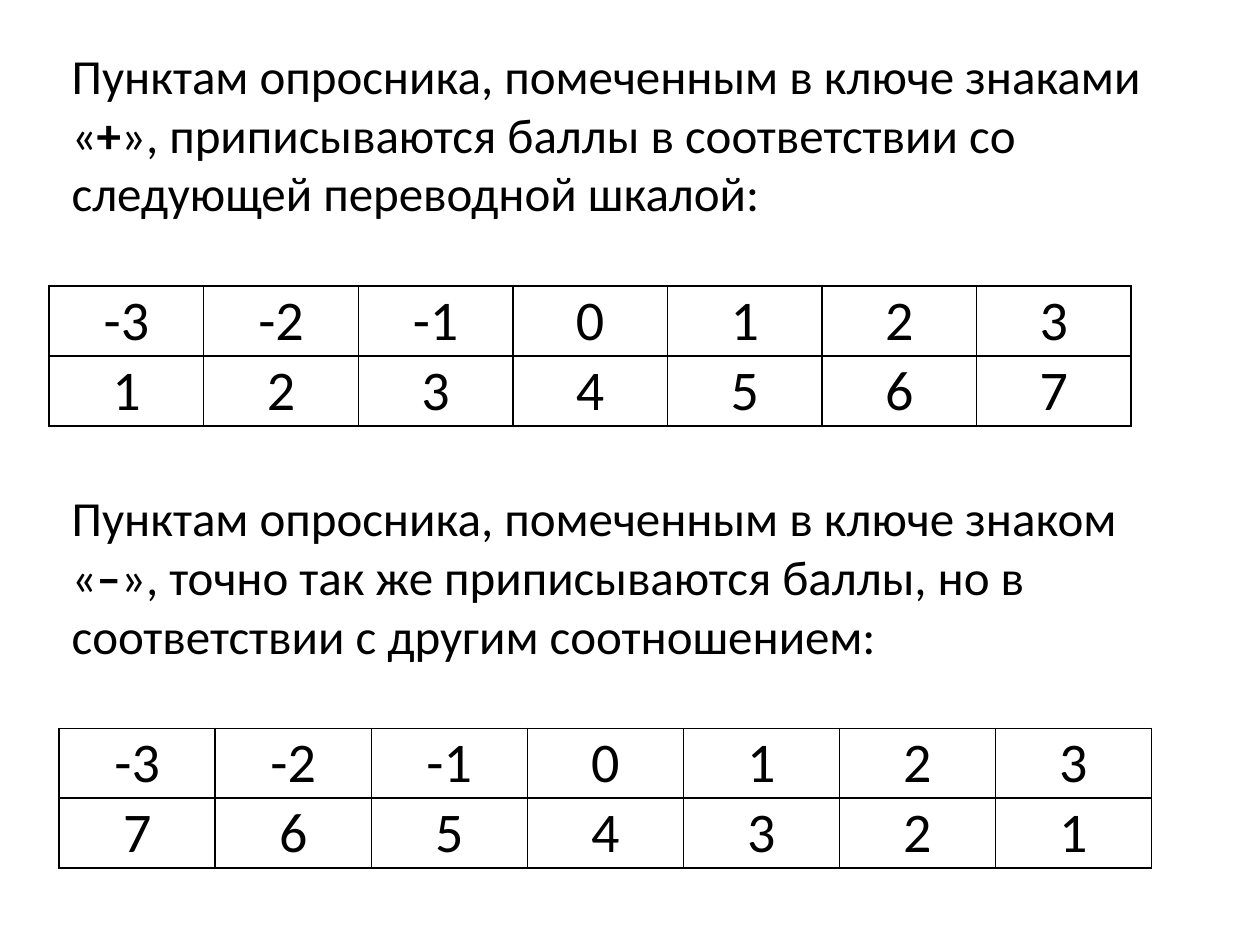
from dataclasses import dataclass

from lxml import etree
from pptx import Presentation
from pptx import util as u
from pptx.dml.color import RGBColor
from pptx.enum import text as t
from pptx.oxml import ns

INK = "000000"
FACE = "Calibri"
MARKS = range(-3, 4)


@dataclass
class Rule:
    lead: str
    sign: str
    rest: str
    gap: float  # points above the paragraph


@dataclass
class Scale:
    left: float
    top: float
    width: float
    scores: range


RULES = [
    Rule("Пунктам опросника, помеченным в ключе знаками «", "+",
         "», приписываются баллы в соответствии со следующей переводной шкалой:", 0),
    Rule("Пунктам опросника, помеченным в ключе знаком «", "–",
         "», точно так же приписываются баллы, но в соответствии с другим соотношением:", 152),
]
SCALES = [
    Scale(0.39, 2.27, 8.59, range(1, 8)),
    Scale(0.47, 5.78, 8.67, range(7, 0, -1)),
]


def paint(color, code: str) -> None:
    color.rgb = RGBColor.from_string(code)


def write(para, words: str, size: float, bold: bool = False) -> None:
    run = para.add_run()
    run.text = words
    for key, value in {"name": FACE, "size": u.Pt(size), "bold": bold}.items():
        setattr(run.font, key, value)
    paint(run.font.color, INK)


def frame(cell) -> None:
    """Draw a thin line on each side of the cell."""
    props = cell._tc.get_or_add_tcPr()
    for side in ("lnL", "lnR", "lnT", "lnB"):
        line = etree.SubElement(props, ns.qn(f"a:{side}"), w=str(u.Pt(1)))
        fill = etree.SubElement(line, ns.qn("a:solidFill"))
        etree.SubElement(fill, ns.qn("a:srgbClr"), val=INK)


def add_rules(slide, rules: list[Rule]) -> None:
    box = slide.shapes.add_textbox(
        u.Inches(0.47), u.Inches(0.31), u.Inches(8.83), u.Inches(5.69))
    body = box.text_frame
    body.word_wrap = True
    for i, rule in enumerate(rules):
        para = body.add_paragraph() if i else body.paragraphs[0]
        para.space_before = u.Pt(rule.gap)
        write(para, rule.lead, 28)
        write(para, rule.sign, 28, bold=True)
        write(para, rule.rest, 28)


def add_scale(slide, scale: Scale) -> None:
    rows = (MARKS, scale.scores)
    table = slide.shapes.add_table(
        len(rows), len(MARKS), u.Inches(scale.left), u.Inches(scale.top),
        u.Inches(scale.width), u.Inches(1.11)).table
    for key in ("first_row", "horz_banding"):
        setattr(table, key, False)
    pad = u.Inches(0.01)
    look = {"vertical_anchor": t.MSO_ANCHOR.MIDDLE, "margin_left": pad,
            "margin_right": pad, "margin_top": pad, "margin_bottom": pad}
    for r, row in enumerate(rows):
        for c, value in enumerate(row):
            cell = table.cell(r, c)
            for key, item in look.items():
                setattr(cell, key, item)
            frame(cell)
            cell.fill.background()
            para = cell.text_frame.paragraphs[0]
            para.alignment = t.PP_ALIGN.CENTER
            write(para, str(value), 32)


def main() -> None:
    deck = Presentation()
    deck.slide_width, deck.slide_height = u.Inches(10), u.Inches(7.5)
    slide = deck.slides.add_slide(deck.slide_layouts[6])

    # Scoring rules
    add_rules(slide, RULES)

    # Conversion scales
    for scale in SCALES:
        add_scale(slide, scale)

    deck.save("out.pptx")


if __name__ == "__main__":
    main()
